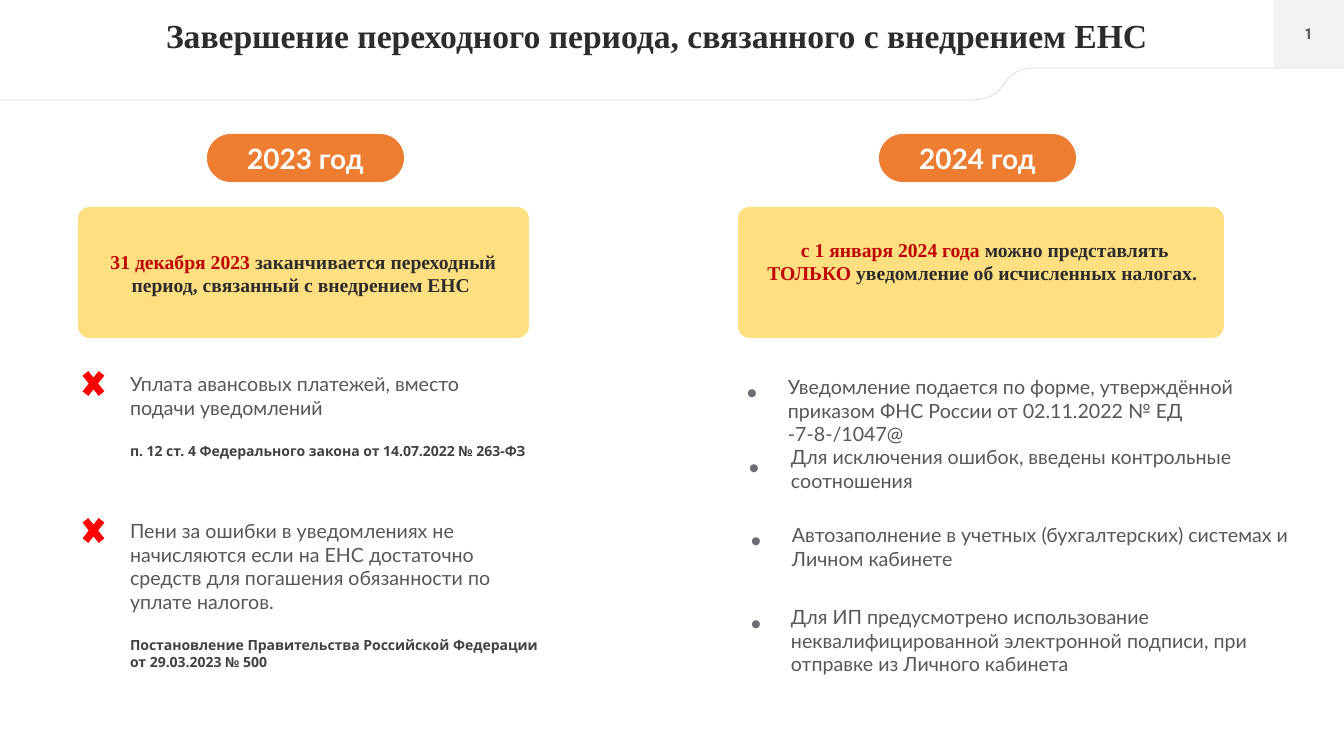
from dataclasses import dataclass

import lxml.etree
import pptx
import pptx.dml.color
import pptx.enum.shapes
import pptx.enum.text
import pptx.oxml
import pptx.oxml.ns
import pptx.util

SCALE = 914400 / 100.8
COLORS = {
    "ink": "2C2B2D",
    "body": "57565A",
    "source": "414043",
    "bullet": "6D6C72",
    "accent": "C00000",
    "cross": "FF0000",
    "year": "ED7D31",
    "panel": "FFC000",
    "corner": "F2F2F2",
    "rule": "D9D9D9",
    "white": "FFFFFF",
}
SHAPES = pptx.enum.shapes.MSO_SHAPE
ALIGN = pptx.enum.text.PP_ALIGN
ANCHOR = pptx.enum.text.MSO_ANCHOR
PLAIN_TABLE_STYLE = "{2D5ABB26-0587-4C30-8999-92F81FD0307C}"
Box = tuple[int, int, int, int]
Run = tuple[str, str]


@dataclass(frozen=True)
class Panel:
    year: str
    year_left: int
    box: Box
    insets: Box
    runs: tuple[Run, ...]


@dataclass(frozen=True)
class Cancelled:
    box: Box
    text: str
    source: str


@dataclass(frozen=True)
class Requirement:
    marker: Box
    box: Box
    text: str


PANELS = (
    Panel("2023 год", 207, (78, 207, 451, 131), (12, 39, 12, 8), (
        ("31 декабря 2023 ", "accent"),
        ("заканчивается переходный период, связанный с внедрением ЕНС ", "ink"),
    )),
    Panel("2024 год", 879, (738, 207, 486, 131), (26, 27, 18, 8), (
        ("с 1 января 2024 года ", "accent"),
        ("можно представлять ", "ink"),
        ("ТОЛЬКО ", "accent"),
        ("уведомление об исчисленных налогах. ", "ink"),
    )),
)
CANCELLED = (
    Cancelled((120, 367, 416, 146), "Уплата авансовых платежей, вместо подачи уведомлений",
              "п. 12 ст. 4 Федерального закона от 14.07.2022 № 263-ФЗ"),
    Cancelled((120, 514, 438, 171),
              "Пени за ошибки в уведомлениях не начисляются если на ЕНС достаточно "
              "средств для погашения обязанности по уплате налогов.",
              "Постановление Правительства Российской Федерации от 29.03.2023 № 500"),
)
REQUIREMENTS = (
    Requirement((737, 366, 50, 51), (778, 370, 529, 57),
                "Уведомление подается по форме, утверждённой приказом ФНС России "
                "от 02.11.2022 № ЕД -7-8-/1047@"),
    Requirement((739, 441, 50, 51), (781, 440, 507, 57),
                "Для исключения ошибок, введены контрольные соотношения"),
    Requirement((741, 513, 50, 53), (782, 518, 535, 57),
                "Автозаполнение в учетных (бухгалтерских) системах и Личном кабинете"),
    Requirement((741, 596, 50, 53), (781, 600, 493, 81),
                "Для ИП предусмотрено использование неквалифицированной электронной подписи, "
                "при отправке из Личного кабинета"),
)


def px(value: float) -> pptx.util.Emu:
    return pptx.util.Emu(round(value * SCALE))


def rgb(name: str) -> pptx.dml.color.RGBColor:
    return pptx.dml.color.RGBColor.from_string(COLORS[name])


def add_child(parent, tag: str, **attributes: str):
    child = lxml.etree.SubElement(parent, pptx.oxml.ns.qn(tag))
    for name, value in attributes.items():
        child.set(name, value)
    return child


def add_filled(slide, kind, box: Box, color: str, radius: float | None = None):
    shape = slide.shapes.add_shape(kind, *map(px, box))
    shape.shadow.inherit = False
    shape.fill.solid()
    shape.fill.fore_color.rgb = rgb(color)
    shape.line.fill.background()
    if radius is not None:
        shape.adjustments[0] = radius
    return shape


def set_insets(holder, insets: Box) -> None:
    holder.margin_left, holder.margin_top, holder.margin_right, holder.margin_bottom = map(px, insets)


def set_frame(shape, insets: Box = (10, 5, 10, 5), anchor=ANCHOR.TOP):
    frame = shape.text_frame
    frame.word_wrap = True
    frame.auto_size = pptx.enum.text.MSO_AUTO_SIZE.NONE
    frame.vertical_anchor = anchor
    set_insets(frame, insets)
    return frame


def add_text_frame(slide, box: Box):
    return set_frame(slide.shapes.add_textbox(*map(px, box)))


def write(paragraph, *runs: Run, font: str = "Lato", size: float = 14, bold: bool = False,
          align=ALIGN.LEFT, before: float = 0) -> None:
    paragraph.alignment = align
    paragraph.space_before = pptx.util.Pt(before)
    for text, color in runs:
        run = paragraph.add_run()
        run.text = text
        run.font.name = font
        run.font.size = pptx.util.Pt(size)
        run.font.bold = bold
        run.font.color.rgb = rgb(color)


def add_marker(slide, box: Box) -> None:
    table = slide.shapes.add_table(1, 1, *map(px, box)).table
    table.first_row = table.horz_banding = False
    table._tbl.tblPr.find(pptx.oxml.ns.qn("a:tableStyleId")).text = PLAIN_TABLE_STYLE
    cell = table.cell(0, 0)
    cell.fill.background()
    cell.vertical_anchor = ANCHOR.MIDDLE
    set_insets(cell, (10, 7, 10, 3))
    paragraph = cell.text_frame.paragraphs[0]
    write(paragraph, ("\N{NO-BREAK SPACE}", "bullet"))
    properties = paragraph._p.get_or_add_pPr()
    properties.set("marL", str(px(20)))
    properties.set("indent", str(px(-20)))
    add_child(add_child(properties, "a:buClr"), "a:srgbClr", val=COLORS["bullet"])
    add_child(properties, "a:buSzPct", val="150000")
    add_child(properties, "a:buFont", typeface="Arial")
    add_child(properties, "a:buChar", char="•")


def add_header(slide) -> None:
    edge = slide.shapes.add_connector(
        pptx.enum.shapes.MSO_CONNECTOR.STRAIGHT, px(1276), px(0), px(1276), px(68))
    add_child(edge._element.spPr, "a:effectLst")
    start, pull_start, pull_end, end = (1035, 68), (997, 68), (1012, 100), (971, 100)
    curve = []
    for step in range(33):
        t = step / 32
        weights = ((1 - t) ** 3, 3 * t * (1 - t) ** 2, 3 * t ** 2 * (1 - t), t ** 3)
        curve.append(tuple(
            px(sum(weight * value for weight, value in zip(weights, axis)))
            for axis in zip(start, pull_start, pull_end, end)))
    builder = slide.shapes.build_freeform(px(1344), px(68))
    builder.add_line_segments(curve + [(px(0), px(100))], close=False)
    swoosh = builder.convert_to_shape()
    swoosh.shadow.inherit = False
    swoosh.fill.background()
    for shape in (edge, swoosh):
        shape.line.color.rgb = rgb("rule")
        shape.line.width = pptx.util.Pt(0.5)

    corner = add_filled(slide, SHAPES.RECTANGLE, (1273, 0, 71, 67), "corner")
    paragraph = set_frame(corner, (0, 0, 0, 0), ANCHOR.MIDDLE).paragraphs[0]
    write(paragraph, ("1", "body"), font="Roboto Condensed", size=11, bold=True, align=ALIGN.CENTER)
    number = paragraph.runs[0]._r
    number.tag = pptx.oxml.ns.qn("a:fld")
    number.set("id", "{B6F15528-21DE-4FAA-801E-634DDDAF4B2B}")
    number.set("type", "slidenum")

    title = slide.shapes.title
    title.left, title.top, title.width, title.height = map(px, (156, 10, 1084, 50))
    write(set_frame(title, anchor=ANCHOR.MIDDLE).paragraphs[0],
          ("Завершение переходного периода, связанного с внедрением ЕНС", "ink"),
          font="Times New Roman", size=24, bold=True)


def add_panel(slide, panel: Panel) -> None:
    pill = add_filled(slide, SHAPES.ROUNDED_RECTANGLE, (panel.year_left, 134, 197, 48), "year", 0.5)
    write(set_frame(pill, (0, 0, 0, 0), ANCHOR.MIDDLE).paragraphs[0], (panel.year, "white"),
          size=20, bold=True, align=ALIGN.CENTER)
    card = add_filled(slide, SHAPES.ROUNDED_RECTANGLE, panel.box, "panel", 0.09)
    add_child(card._element.spPr.find(".//" + pptx.oxml.ns.qn("a:srgbClr")), "a:alpha", val="50000")
    write(set_frame(card, panel.insets).paragraphs[0], *panel.runs,
          font="Times New Roman", bold=True, align=ALIGN.CENTER)


def add_cancelled(slide, item: Cancelled) -> None:
    add_filled(slide, SHAPES.MATH_MULTIPLY, (78, item.box[1] - 3, 31, 39), "cross")
    frame = add_text_frame(slide, item.box)
    write(frame.paragraphs[0], (item.text, "body"))
    write(frame.add_paragraph(), (item.source, "source"),
          font="Open Sans", size=10, bold=True, before=16.8)


def add_requirement(slide, item: Requirement) -> None:
    add_marker(slide, item.marker)
    write(add_text_frame(slide, item.box).paragraphs[0], (item.text, "body"))


def main() -> None:
    presentation = pptx.Presentation()
    presentation.slide_width, presentation.slide_height = px(1344), px(756)
    slide = presentation.slides.add_slide(presentation.slide_layouts[5])
    add_header(slide)
    for panel in PANELS:
        add_panel(slide, panel)
    for item in CANCELLED:
        add_cancelled(slide, item)
    for item in REQUIREMENTS:
        add_requirement(slide, item)
    presentation.save("out.pptx")


if __name__ == "__main__":
    main()
